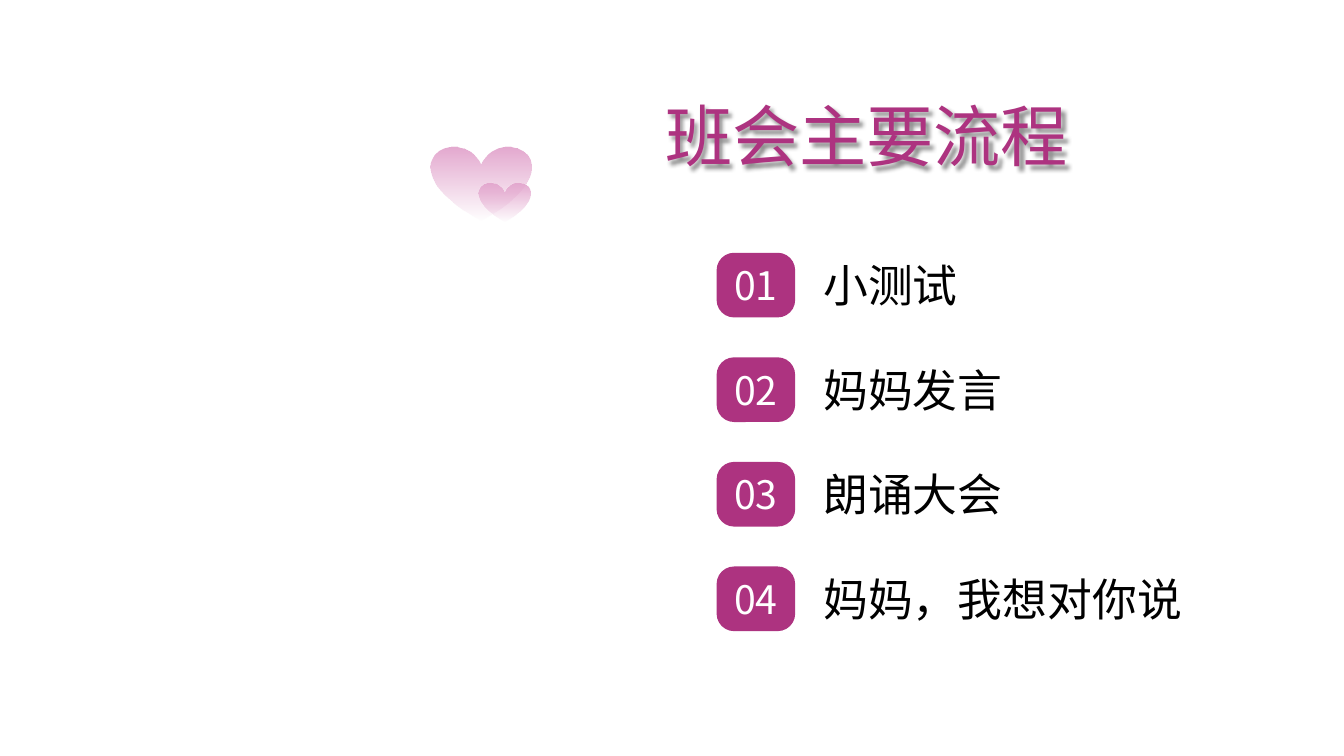
from dataclasses import dataclass

from lxml.etree import SubElement
from pptx import Presentation
from pptx.dml.color import RGBColor
from pptx.enum.shapes import MSO_SHAPE as Preset
from pptx.enum.text import MSO_ANCHOR as Anchor, PP_ALIGN as Align
from pptx.oxml.ns import qn
from pptx.util import Cm, Pt


@dataclass(frozen=True)
class Theme:
    """Colours, font and type sizes of the slide."""
    font: str = "Noto Sans CJK SC"
    accent: str = "AD3380"
    heart: str = "E4A8CF"
    ink: str = "000000"
    paper: str = "FFFFFF"
    title_size: int = 48
    item_size: int = 32
    number_size: int = 28


THEME = Theme()
STEPS = [("小测试", 7.04), ("妈妈发言", 7.04), ("朗诵大会", 7.04), ("妈妈，我想对你说", 11.71)]
FIRST_TOP = 6.37
STEP_PITCH = 2.635
ROW_HEIGHT = 1.63


def write(shape, text, *, size, color, align=Align.LEFT, anchor=Anchor.TOP):
    """Put one formatted line of text in a shape."""
    frame = shape.text_frame
    frame.word_wrap = True
    frame.vertical_anchor = anchor
    para = frame.paragraphs[0]
    para.alignment = align
    span = para.add_run()
    span.text = text
    span.font.name = THEME.font
    span.font.size = Pt(size)
    span.font.color.rgb = RGBColor.from_string(color)
    SubElement(span.font._element, qn("a:ea"), typeface=THEME.font)


def add_label(shapes, text, left, top, width, height, **style):
    """Add a text box holding one line."""
    box = shapes.add_textbox(Cm(left), Cm(top), Cm(width), Cm(height))
    write(box, text, **style)
    return box


def add_shape(shapes, preset, left, top, width, height):
    """Add a preset shape without shadow or outline."""
    shape = shapes.add_shape(preset, Cm(left), Cm(top), Cm(width), Cm(height))
    shape.shadow.inherit = False
    shape.line.fill.background()
    return shape


def add_title(page):
    """Add the heading with its soft shadow."""
    box = add_label(page.shapes, "班会主要流程", 16.51, 2.26, 12.55, 2.31,
                    size=THEME.title_size, color=THEME.accent)
    effects = SubElement(box._element.spPr, qn("a:effectLst"))
    shadow = SubElement(effects, qn("a:outerShdw"), blurRad=str(Pt(3)), dist=str(Pt(3)),
                        dir="2700000", algn="tl", rotWithShape="0")
    tone = SubElement(shadow, qn("a:srgbClr"), val=THEME.ink)
    SubElement(tone, qn("a:alpha"), val="43000")


def add_step(page, number, text, width):
    """Add a numbered badge with its label."""
    shapes = page.shapes.add_group_shape().shapes
    top = FIRST_TOP + (number - 1) * STEP_PITCH
    add_label(shapes, text, 20.5, top, width, ROW_HEIGHT,
              size=THEME.item_size, color=THEME.ink)
    badge = add_shape(shapes, Preset.ROUNDED_RECTANGLE, 18.06, top, 1.98, ROW_HEIGHT)
    badge.adjustments[0] = 0.27
    badge.fill.solid()
    badge.fill.fore_color.rgb = RGBColor.from_string(THEME.accent)
    badge.text_frame.margin_left = badge.text_frame.margin_right = 0
    write(badge, f"{number:02d}", size=THEME.number_size, color=THEME.paper,
          align=Align.CENTER, anchor=Anchor.MIDDLE)


def add_heart(shapes, left, top, width, height):
    """Add a heart that fades out downwards."""
    heart = add_shape(shapes, Preset.HEART, left, top, width, height)
    heart.fill.gradient()
    heart.fill.gradient_angle = 270
    for stop, position in zip(heart.fill.gradient_stops, (0, 1)):
        stop.position = position
        stop.color.rgb = RGBColor.from_string(THEME.heart)
    tone = heart._element.spPr.findall(".//" + qn("a:srgbClr"))[-1]
    SubElement(tone, qn("a:alpha"), val="0")


def main():
    """Build the slide and save it."""
    deck = Presentation()
    deck.slide_width, deck.slide_height = Cm(33.87), Cm(19.05)
    page = deck.slides.add_slide(deck.slide_layouts[6])
    add_title(page)
    for number, (text, width) in enumerate(STEPS, 1):
        add_step(page, number, text, width)
    hearts = page.shapes.add_group_shape().shapes
    add_heart(hearts, 10.85, 3.66, 2.54, 1.9)
    add_heart(hearts, 12.07, 4.6, 1.3, 0.99)
    deck.save("out.pptx")


if __name__ == "__main__":
    main()
